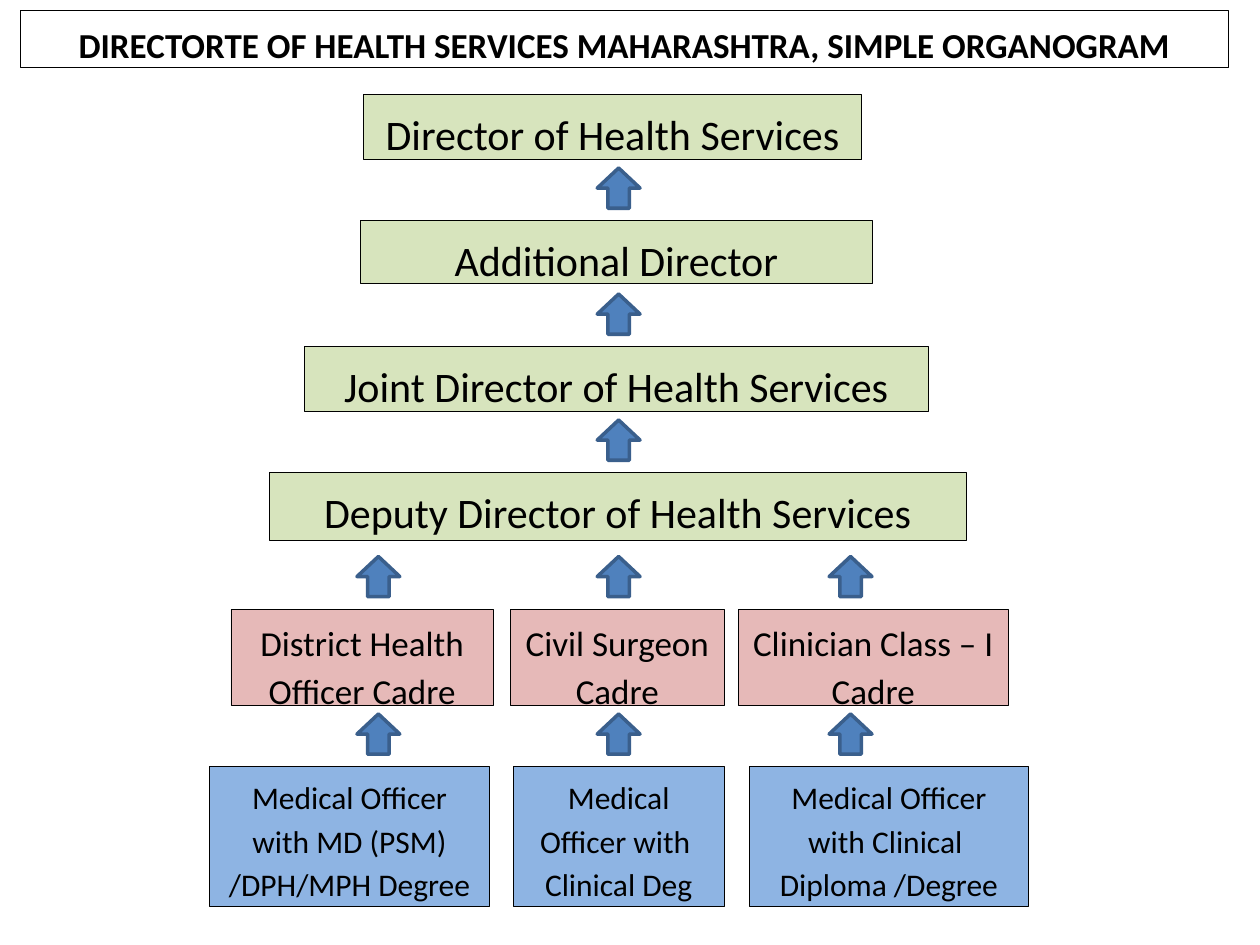
"""Build a one-slide organogram of a state health directorate."""
from dataclasses import dataclass

from pptx import Presentation
from pptx.dml.color import RGBColor
from pptx.enum.shapes import MSO_SHAPE
from pptx.enum.text import MSO_ANCHOR, PP_ALIGN
from pptx.slide import Slide
from pptx.util import Pt

RECTANGLE = MSO_SHAPE.RECTANGLE
UP_ARROW = MSO_SHAPE.UP_ARROW
TOP = MSO_ANCHOR.TOP
CENTER = PP_ALIGN.CENTER


def rgb(hex_color):
    return RGBColor.from_string(hex_color)


@dataclass
class Organogram:
    slide: Slide
    font: str = "Calibri"
    ink: str = "000000"
    arrow_fill: str = "4F81BD"
    arrow_line: str = "3A5F8C"
    arrow_width: float = 24.5
    arrow_height: float = 23

    def shape(self, kind, left, top, width, height, fill, line, weight):
        shape = self.slide.shapes.add_shape(
            kind, Pt(left), Pt(top), Pt(width), Pt(height))
        shape.shadow.inherit = False
        shape.fill.solid()
        shape.fill.fore_color.rgb = rgb(fill)
        shape.line.color.rgb = rgb(line)
        shape.line.width = Pt(weight)
        return shape

    def box(self, text, left, top, width, height, fill, size, bold=False):
        box = self.shape(RECTANGLE, left, top, width, height, fill, self.ink, 0.5)
        frame = box.text_frame
        frame.word_wrap = True
        frame.vertical_anchor = TOP
        paragraph = frame.paragraphs[0]
        paragraph.text = text
        paragraph.alignment = CENTER
        paragraph.line_spacing = 1.15
        paragraph.space_after = Pt(10)
        paragraph.font.name = self.font
        paragraph.font.size = Pt(size)
        paragraph.font.bold = bold
        paragraph.font.color.rgb = rgb(self.ink)

    def arrow(self, left, top):
        self.shape(UP_ARROW, left, top, self.arrow_width, self.arrow_height,
                   self.arrow_fill, self.arrow_line, 2)


def main():
    presentation = Presentation()
    presentation.slide_width = Pt(720)
    presentation.slide_height = Pt(540)
    chart = Organogram(presentation.slides.add_slide(presentation.slide_layouts[6]))

    chart.box("DIRECTORTE OF HEALTH SERVICES MAHARASHTRA, SIMPLE ORGANOGRAM",
              12, 6, 690, 32.4, "FFFFFF", 20, bold=True)

    directors = [
        ("Director of Health Services", 207.9, 284.4, 37.4),
        ("Additional Director", 206, 292.4, 36),
        ("Joint Director of Health Services", 174, 356.4, 37.4),
        ("Deputy Director of Health Services", 154, 398.2, 38.7),
    ]
    first_top, pitch = 54, 72
    for level, (title, left, width, height) in enumerate(directors):
        chart.box(title, left, first_top + level * pitch, width, height, "D7E4BD", 24)

    cadres = [
        ("District Health Officer Cadre", 132, 150),
        ("Civil Surgeon Cadre", 291.6, 122.4),
        ("Clinician Class – I Cadre", 422, 154),
    ]
    for title, left, width in cadres:
        chart.box(title, left, 348, width, 55.2, "E6B9B8", 20)

    officers = [
        ("Medical Officer with MD (PSM) /DPH/MPH Degree", 120, 159.6),
        ("Medical Officer with  Clinical Deg", 293.2, 120.8),
        ("Medical Officer with Clinical  Diploma /Degree", 428.2, 159.6),
    ]
    for title, left, width in officers:
        chart.box(title, left, 438, width, 79.8, "8EB4E3", 18)

    arrow_columns = [204, 341.3, 473.8]
    for level in range(len(directors) - 1):
        chart.arrow(arrow_columns[1], 96 + level * pitch)
    for top in (318, 408):
        for left in arrow_columns:
            chart.arrow(left, top)

    presentation.save("out.pptx")


if __name__ == "__main__":
    main()
